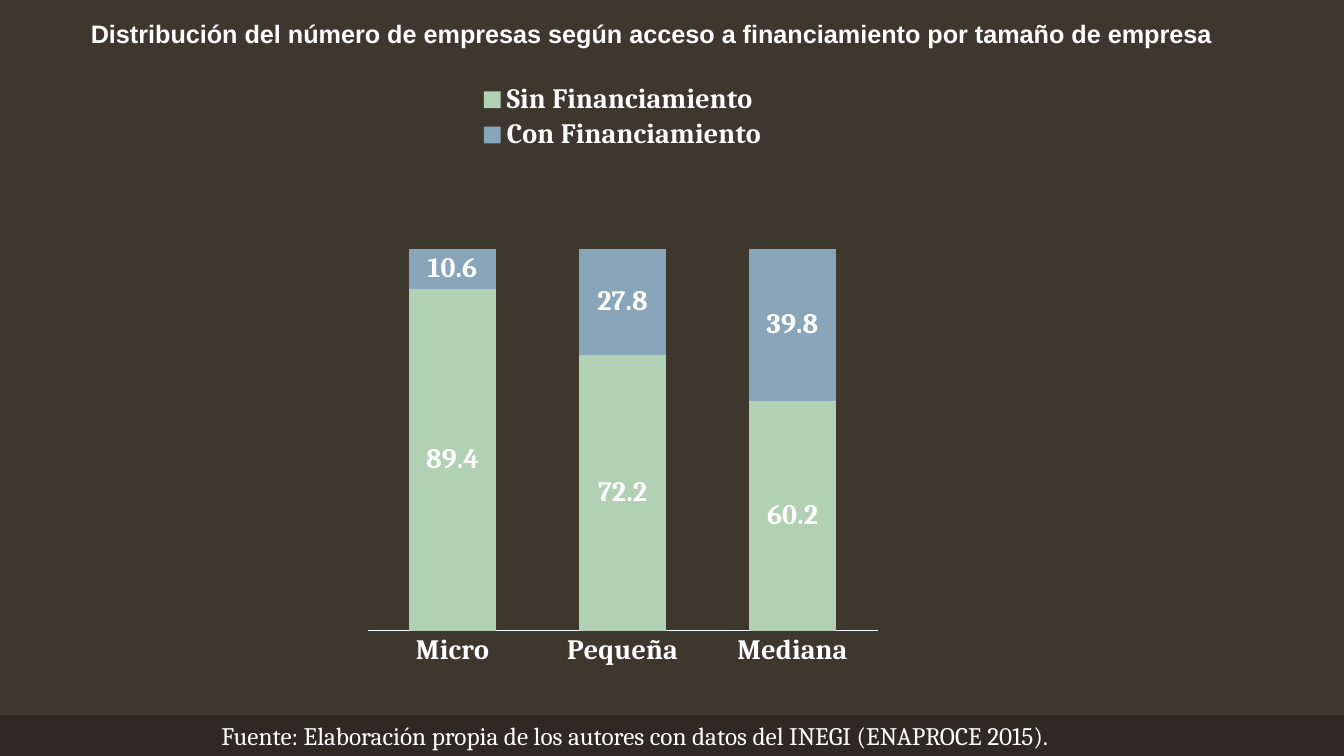
"""Build the slide on business access to financing by company size."""
from lxml.etree import SubElement as Sub
from pptx import Presentation
from pptx.chart.data import CategoryChartData as Data
from pptx.dml.color import RGBColor
from pptx.enum.chart import XL_CHART_TYPE as Kind, XL_LABEL_POSITION as Spot
from pptx.enum.chart import XL_LEGEND_POSITION as Side, XL_TICK_MARK as Mark
from pptx.enum.shapes import MSO_SHAPE as Form
from pptx.enum.text import MSO_ANCHOR as Anchor, MSO_AUTO_SIZE as Fit, PP_ALIGN as Align
from pptx.oxml.ns import qn
from pptx.util import Pt

TITLE = "Distribución del número de empresas según acceso a financiamiento por tamaño de empresa"
SOURCE = "Fuente: Elaboración propia de los autores con datos del INEGI (ENAPROCE 2015)."
SIZES = ["Micro", "Pequeña", "Mediana"]
SERIES = [
    ("Sin Financiamiento", [89.4, 72.2, 60.2], "B2D0B4"),
    ("Con Financiamiento", [10.6, 27.8, 39.8], "88A5BA"),
]
WIDE, HIGH, BAND = 960, 540, 29
WHITE = "FFFFFF"


def paint(fill, tone):
    fill.solid()
    fill.fore_color.rgb = RGBColor.from_string(tone)


def style(font, name, size, bold):
    font.name, font.size, font.bold = name, Pt(size), bold
    font.color.rgb = RGBColor.from_string(WHITE)


def write(shape, text, name, bold, align):
    frame = shape.text_frame
    frame.word_wrap, frame.auto_size = True, Fit.NONE
    frame.vertical_anchor = Anchor.TOP
    para = frame.paragraphs[0]
    para.alignment = align
    run = para.add_run()
    run.text = text
    style(run.font, name, 18, bold)


def place(part, index, box, inner=False):
    old = part.find(qn("c:layout"))
    if old is not None:
        part.remove(old)
    layout = Sub(part, qn("c:layout"))
    part.insert(index, layout)
    manual = Sub(layout, qn("c:manualLayout"))
    items = [("layoutTarget", "inner")] if inner else []
    items += [("xMode", "edge"), ("yMode", "edge")]
    items += zip("xywh", box)
    for tag, value in items:
        Sub(manual, qn("c:" + tag)).set("val", str(value))


def draw(slide):
    data = Data(number_format="General")
    data.categories = SIZES
    for name, values, tone in SERIES:
        data.add_series(name, values)
    chart = slide.shapes.add_chart(
        Kind.COLUMN_STACKED, Pt(255), Pt(49), Pt(379.5), Pt(436.5), data).chart
    style(chart.font, "Cambria", 20, True)
    chart.has_title = False
    chart.has_legend = True
    legend = chart.legend
    legend.position, legend.include_in_layout = Side.TOP, False
    place(legend._element, 1, (0.22, 0.02, 0.56, 0.12))
    place(chart._chartSpace.chart.plotArea, 0, (0.02, 0.17, 0.96, 0.75), True)
    base, scale = chart.category_axis, chart.value_axis
    base.major_tick_mark = base.minor_tick_mark = Mark.NONE
    paint(base.format.line.fill, WHITE)
    base.format.line.width = Pt(0.75)
    scale.minimum_scale, scale.maximum_scale = 0, 120
    scale.has_major_gridlines = scale.visible = False
    plot = chart.plots[0]
    plot.gap_width, plot.overlap, plot.vary_by_categories = 95, 100, False
    for bars, (name, values, tone) in zip(plot.series, SERIES):
        paint(bars.format.fill, tone)
        labels = bars.data_labels
        labels.show_value, labels.position = True, Spot.CENTER
        style(labels.font, "Cambria", 20, True)


def main():
    deck = Presentation()
    deck.slide_width, deck.slide_height = Pt(WIDE), Pt(HIGH)
    slide = deck.slides.add_slide(deck.slide_layouts[5])
    paint(slide.background.fill, "3D372E")
    foot = HIGH - BAND
    band = slide.shapes.add_shape(Form.RECTANGLE, 0, Pt(foot), Pt(WIDE), Pt(BAND))
    band.shadow.inherit = False
    paint(band.fill, "2E2923")
    band.line.fill.background()
    title = slide.shapes.title
    title.left, title.top, title.width, title.height = Pt(12), Pt(9.5), Pt(907), Pt(BAND)
    write(title, TITLE, "Arial", True, Align.CENTER)
    draw(slide)
    note = slide.shapes.add_textbox(Pt(151), Pt(foot), Pt(731.5), Pt(BAND))
    write(note, SOURCE, "Cambria", False, Align.LEFT)
    deck.save("out.pptx")


if __name__ == "__main__":
    main()
